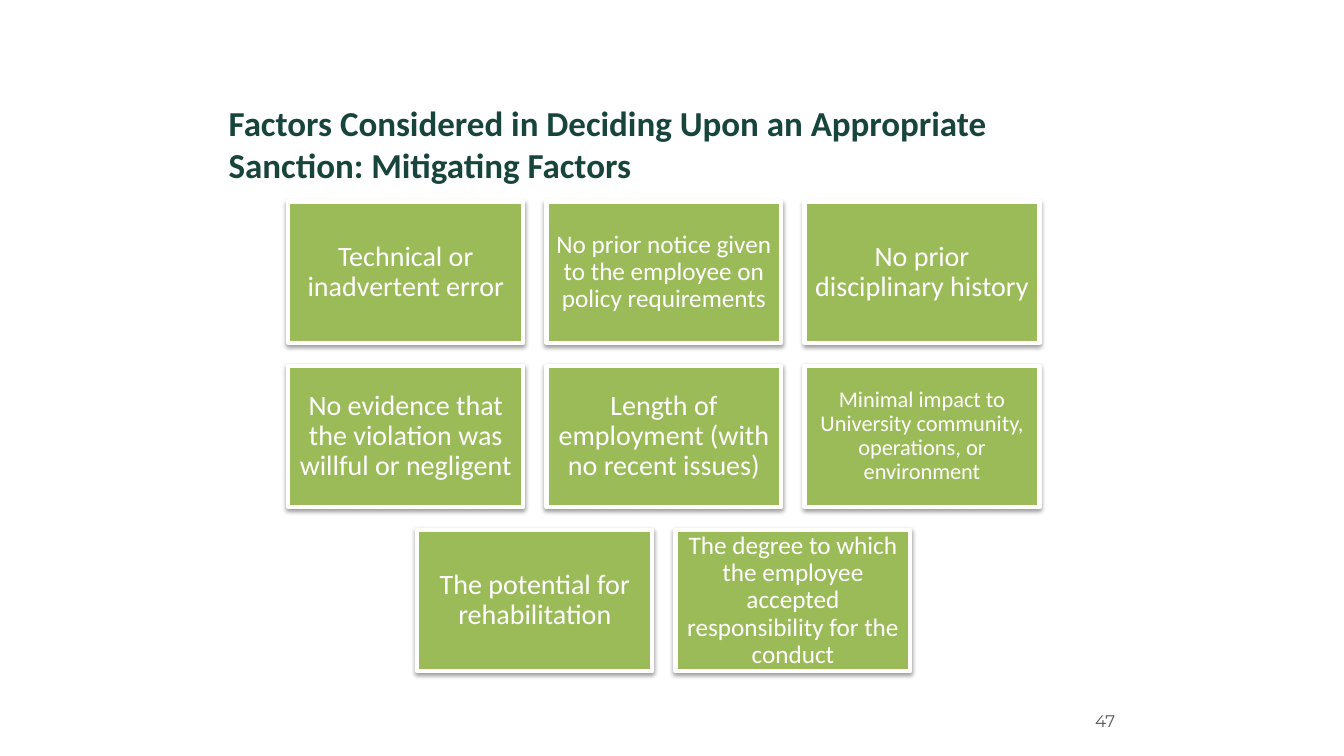
from lxml import etree
from pptx import Presentation
from pptx import util as u
from pptx.dml.color import RGBColor
from pptx.enum import shapes, text
from pptx.oxml import parse_xml
from pptx.oxml.ns import nsdecls, qn

PX = 9144
COLORS = {"heading": "18453B", "card": "9BBB59", "white": "FFFFFF",
          "number": "595959", "shadow": "000000"}


def write_text(shape, content, size, color, font="Calibri", bold=False,
               align=text.PP_ALIGN.LEFT, anchor=text.MSO_ANCHOR.TOP,
               inset=None, spacing=1.0):
    frame = shape.text_frame
    frame.word_wrap = True
    frame.vertical_anchor = anchor
    if inset is not None:
        frame.margin_left = frame.margin_right = inset * PX
        frame.margin_top = frame.margin_bottom = inset * PX
    paragraph = frame.paragraphs[0]
    paragraph.alignment = align
    paragraph.line_spacing = spacing
    run = paragraph.add_run()
    run.text = content
    run.font.name = font
    run.font.size = u.Pt(size)
    run.font.bold = bold
    run.font.color.rgb = RGBColor.from_string(COLORS[color])


def add_shadow(shape):
    properties = shape._element.spPr
    for effects in properties.findall(qn("a:effectLst")):
        properties.remove(effects)
    effects = parse_xml(f"<a:effectLst {nsdecls('a')}/>")
    shadow = etree.SubElement(effects, qn("a:outerShdw"), blurRad="40000",
                              dist="20000", dir="5400000", rotWithShape="0")
    color = etree.SubElement(shadow, qn("a:srgbClr"), val=COLORS["shadow"])
    etree.SubElement(color, qn("a:alpha"), val="38000")
    properties.append(effects)


presentation = Presentation()
presentation.slide_width = 1333 * PX
presentation.slide_height = 750 * PX
slide = presentation.slides.add_slide(presentation.slide_layouts[6])

title = slide.shapes.add_textbox(217 * PX, 96 * PX, 900 * PX, 79 * PX)
write_text(title, "Factors Considered in Deciding Upon an Appropriate Sanction: Mitigating Factors",
           size=25, color="heading", bold=True)

number = slide.shapes.add_textbox(883 * PX, 695 * PX, 233 * PX, 40 * PX)
write_text(number, "47", size=12, color="number", font="Montserrat",
           align=text.PP_ALIGN.RIGHT, anchor=text.MSO_ANCHOR.MIDDLE)

factor_rows = [
    [("Technical or inadvertent error", 20),
     ("No prior notice given to the employee on policy requirements", 18),
     ("No prior disciplinary history", 20)],
    [("No evidence that the violation was willful or negligent", 20),
     ("Length of employment (with no recent issues)", 20),
     ("Minimal impact to University community, operations, or environment", 16)],
    [("The potential for rehabilitation", 20),
     ("The degree to which the employee accepted responsibility for the conduct", 18)],
]
CARD_WIDTH, CARD_HEIGHT = 233, 140
COLUMN_STEP, ROW_STEP = 256, 163
GRID_LEFT, GRID_TOP = 286, 200

for row, factors in enumerate(factor_rows):
    row_left = GRID_LEFT + (3 - len(factors)) * COLUMN_STEP // 2
    for column, (factor, size) in enumerate(factors):
        card = slide.shapes.add_shape(
            shapes.MSO_SHAPE.RECTANGLE,
            (row_left + column * COLUMN_STEP) * PX,
            (GRID_TOP + row * ROW_STEP) * PX,
            CARD_WIDTH * PX, CARD_HEIGHT * PX)
        card.fill.solid()
        card.fill.fore_color.rgb = RGBColor.from_string(COLORS["card"])
        card.line.color.rgb = RGBColor.from_string(COLORS["white"])
        card.line.width = u.Pt(3)
        add_shadow(card)
        write_text(card, factor, size=size, color="white",
                   align=text.PP_ALIGN.CENTER, anchor=text.MSO_ANCHOR.MIDDLE,
                   inset=8 if size == 20 else 7, spacing=0.9)

presentation.save("out.pptx")
